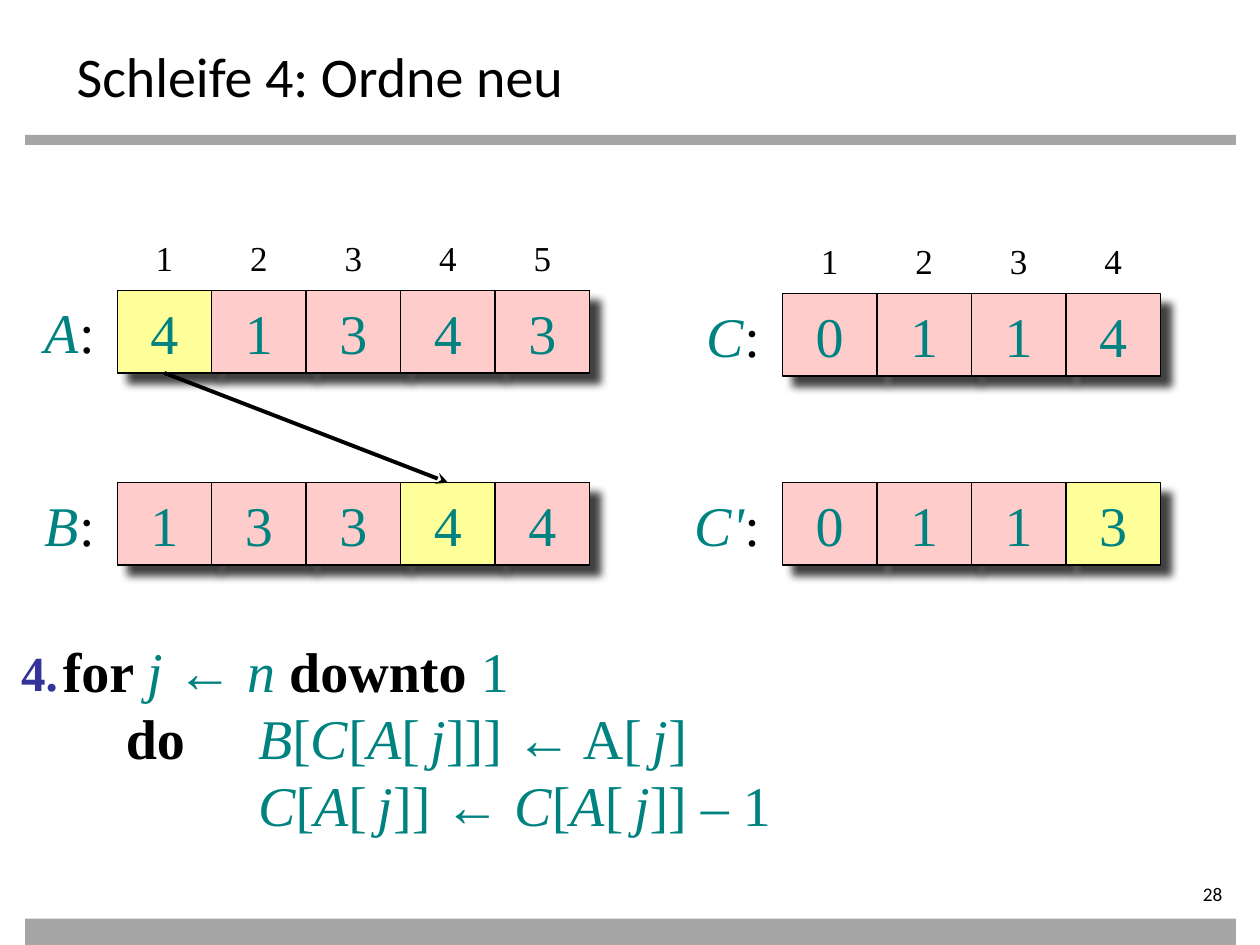
from lxml import etree
from pptx import Presentation
from pptx.dml.color import RGBColor
from pptx.enum.shapes import MSO_CONNECTOR, MSO_SHAPE
from pptx.enum.text import MSO_ANCHOR, PP_ALIGN
from pptx.oxml.ns import qn
from pptx.util import Inches, Pt

BLACK = RGBColor(0x00, 0x00, 0x00)
GRAY = RGBColor(0xA6, 0xA6, 0xA6)
TEAL = RGBColor(0x00, 0x83, 0x80)
INDIGO = RGBColor(0x33, 0x33, 0x99)
PINK = RGBColor(0xFF, 0xCC, 0xCC)
YELLOW = RGBColor(0xFF, 0xFF, 0x99)

RECTANGLE = MSO_SHAPE.RECTANGLE
STRAIGHT = MSO_CONNECTOR.STRAIGHT
LEFT, CENTER, RIGHT = PP_ALIGN.LEFT, PP_ALIGN.CENTER, PP_ALIGN.RIGHT
TOP, MIDDLE = MSO_ANCHOR.TOP, MSO_ANCHOR.MIDDLE

SERIF, SANS = "Times New Roman", "Calibri"
COLUMNS, ROWS = 40, 30
CELL_WIDTH, CELL_HEIGHT = 3, 2.62
KEYWORD = {"bold": True, "color": BLACK}
VARIABLE = {"italic": True}
THIN = {"size": 24}


def add_run(paragraph, text, size=32, font=SERIF, color=TEAL, bold=False, italic=False):
    run = paragraph.add_run()
    run.text = text
    run.font.size = Pt(size)
    run.font.name = font
    run.font.color.rgb = color
    run.font.bold = bold
    run.font.italic = italic


def indexed_by_j(*names):
    runs = []
    for name in names:
        runs += [(name, VARIABLE), ("[", {})]
    return runs + [(" ", THIN), ("j", VARIABLE)]


class SlideBuilder:
    def __init__(self, deck):
        self.slide = deck.slides.add_slide(deck.slide_layouts[6])
        self.column = deck.slide_width / COLUMNS
        self.row = deck.slide_height / ROWS

    def place(self, left, top, width, height):
        return (round(left * self.column), round(top * self.row),
                round(width * self.column), round(height * self.row))

    def text(self, area, *lines, align=LEFT, wrap=True):
        box = self.slide.shapes.add_textbox(*self.place(*area))
        frame = box.text_frame
        frame.word_wrap = wrap
        frame.vertical_anchor = TOP
        for number, runs in enumerate(lines):
            paragraph = frame.add_paragraph() if number else frame.paragraphs[0]
            paragraph.alignment = align
            for content, style in runs:
                add_run(paragraph, content, **style)
        return frame

    def rectangle(self, area, fill):
        shape = self.slide.shapes.add_shape(RECTANGLE, *self.place(*area))
        shape.shadow.inherit = False
        shape.fill.solid()
        shape.fill.fore_color.rgb = fill
        shape.line.fill.background()
        return shape

    def cell(self, left, top, value, fill):
        cell = self.rectangle((left, top, CELL_WIDTH, CELL_HEIGHT), fill)
        cell.line.color.rgb = BLACK
        cell.line.width = Pt(0.75)
        effects = cell._element.spPr.find(qn("a:effectLst"))
        shadow = etree.SubElement(effects, qn("a:outerShdw"), blurRad=str(Pt(5)),
                                  dist=str(Pt(8.5)), dir="2700000",
                                  algn="ctr", rotWithShape="0")
        tint = etree.SubElement(shadow, qn("a:srgbClr"), val=str(BLACK))
        etree.SubElement(tint, qn("a:alpha"), val="75000")
        frame = cell.text_frame
        frame.word_wrap = False
        frame.vertical_anchor = MIDDLE
        frame.paragraphs[0].alignment = CENTER
        add_run(frame.paragraphs[0], value)
        return cell

    def array(self, name, values, left, top, name_width, marked=None, numbered=False):
        self.text((left - 0.32 - name_width, top + 0.04, name_width, 2.52),
                  [(name, VARIABLE), (":", {"color": BLACK})], align=RIGHT, wrap=False)
        cells = []
        for index, value in enumerate(values):
            cell_left = left + index * CELL_WIDTH
            fill = YELLOW if index == marked else PINK
            cells.append(self.cell(cell_left, top, value, fill))
            if numbered:
                self.text((cell_left + 0.82, top - 1.9, 1.36, 1.72),
                          [(str(index + 1), {"size": 20, "color": BLACK})],
                          align=CENTER, wrap=False)
        return cells

    def arrow(self, source, target):
        arrow = self.slide.shapes.add_connector(STRAIGHT, 0, 0, 0, 0)
        arrow.begin_connect(source, 2)
        arrow.end_connect(target, 0)
        arrow.line.color.rgb = BLACK
        arrow.line.width = Pt(2.25)
        etree.SubElement(arrow.line._get_or_add_ln(), qn("a:tailEnd"), type="stealth")
        etree.SubElement(arrow._element.spPr, qn("a:effectLst"))

    def code(self, area, *lines):
        frame = self.text(area, *lines)
        for paragraph in frame.paragraphs[1:]:
            properties = paragraph._p.get_or_add_pPr()
            properties.set("marL", str(Inches(1.55)))
            properties.set("indent", str(Inches(-1.05)))


def main():
    deck = Presentation()
    deck.slide_width, deck.slide_height = Inches(10), Inches(7.5)
    page = SlideBuilder(deck)

    page.rectangle((0.8, 4.28, 38.44, 0.32), GRAY)
    page.rectangle((0.8, 29.16, 38.44, 0.84), GRAY)
    page.text((2.04, 1.12, 36, 2.2),
              [("Schleife 4: Ordne neu", {"font": SANS, "color": BLACK})])

    source = page.array("A", "41343", 3.72, 9.22, 2.4, marked=0, numbered=True)
    sorted_cells = page.array("B", "13344", 3.72, 15.32, 2.4, marked=3)
    page.array("C", "0114", 24.84, 9.32, 2.48, numbered=True)
    page.array("C'", "0113", 24.84, 15.32, 2.88, marked=3)

    page.code(
        (1.6, 20, 36.84, 6.88),
        [("for ", KEYWORD), ("j ", VARIABLE), ("← ", {}), ("n ", VARIABLE),
         ("downto ", KEYWORD), ("1", {})],
        [("do\t", KEYWORD), *indexed_by_j("B", "C", "A"), ("]]] ← A[", {}),
         (" ", THIN), ("j", VARIABLE), ("]", {})],
        [("\t", {}), *indexed_by_j("C", "A"), ("]] ← ", {}),
         *indexed_by_j("C", "A"), ("]] – 1", {})],
    )
    page.arrow(source[0], sorted_cells[3])
    page.text((0.28, 20.2, 3.76, 2.28),
              [("4.", {"size": 28, "color": INDIGO, "bold": True})])

    number = page.text((34.8, 28, 4.4, 0.88),
                       [("28", {"size": 11, "font": SANS, "color": BLACK})], align=RIGHT)
    number.margin_left = number.margin_top = number.margin_bottom = 0
    deck.save("out.pptx")


if __name__ == "__main__":
    main()
